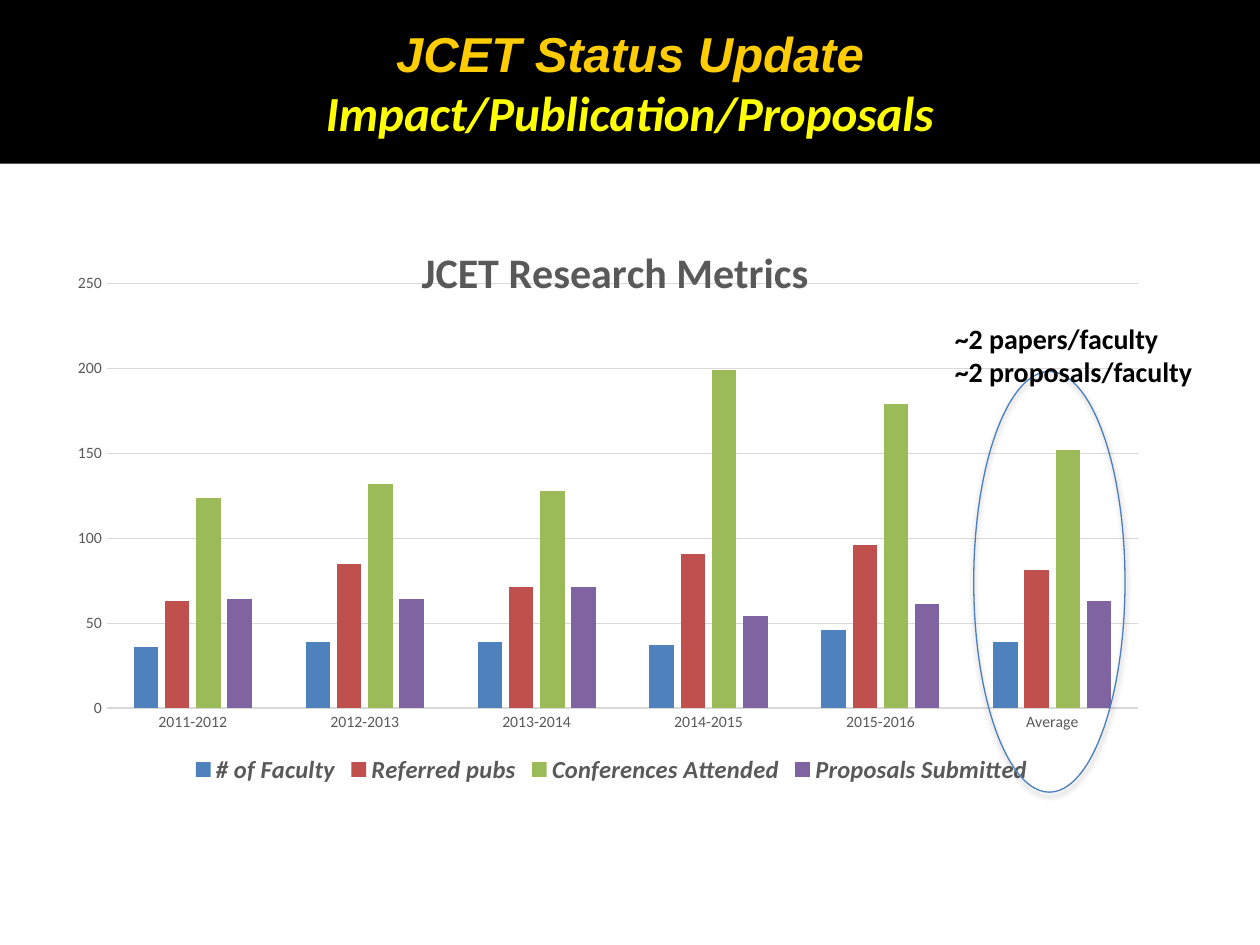
import pptx
import pptx.chart.data
import pptx.dml.color
import pptx.enum.chart
import pptx.enum.shapes
import pptx.enum.text
import pptx.oxml
import pptx.oxml.ns
import pptx.util

Cm = pptx.util.Cm
RGBColor = pptx.dml.color.RGBColor
BLACK = RGBColor(0x00, 0x00, 0x00)
GOLD = RGBColor(0xFF, 0xCC, 0x00)
YELLOW = RGBColor(0xFF, 0xFF, 0x00)
GREY = RGBColor(0x59, 0x59, 0x59)
GRID = RGBColor(0xD9, 0xD9, 0xD9)
RING = RGBColor(0x4B, 0x7E, 0xBC)

YEARS = ["2011-2012", "2012-2013", "2013-2014", "2014-2015", "2015-2016", "Average"]
METRICS = [
    ("# of Faculty", RGBColor(0x4F, 0x81, 0xBD), (36, 39, 39, 37, 46, 39)),
    ("Referred pubs", RGBColor(0xC0, 0x50, 0x4D), (63, 85, 71, 91, 96, 81)),
    ("Conferences Attended", RGBColor(0x9B, 0xBB, 0x59), (124, 132, 128, 199, 179, 152)),
    ("Proposals Submitted", RGBColor(0x80, 0x64, 0xA2), (64, 64, 71, 54, 61, 63)),
]


def apply(target, values):
    for name, value in values.items():
        setattr(target, name, value)


class MetricsSlide:
    def __init__(self, slide):
        self.slide = slide

    def font(self, font, size, color, family="Calibri", bold=True, italic=False):
        apply(font, dict(size=pptx.util.Pt(size), name=family, bold=bold, italic=italic))
        font.color.rgb = color

    def line(self, line, color):
        line.color.rgb = color
        line.width = pptx.util.Pt(0.75)

    def shape(self, kind, box):
        shape = self.slide.shapes.add_shape(kind, *box)
        shape.shadow.inherit = False
        return shape

    def band(self, *box):
        band = self.shape(pptx.enum.shapes.MSO_SHAPE.RECTANGLE, box)
        band.fill.solid()
        band.fill.fore_color.rgb = BLACK
        band.line.fill.background()

    def ring(self, *box):
        ring = self.shape(pptx.enum.shapes.MSO_SHAPE.OVAL, box)
        ring.fill.background()
        self.line(ring.line, RING)
        effects = ring._element.spPr.find(pptx.oxml.ns.qn("a:effectLst"))
        effects.append(pptx.oxml.parse_xml(
            f'<a:outerShdw {pptx.oxml.ns.nsdecls("a")} blurRad="40000" dist="23000" '
            'dir="5400000" rotWithShape="0"><a:srgbClr val="000000">'
            '<a:alpha val="35000"/></a:srgbClr></a:outerShdw>'))

    def fill_text(self, frame, lines, align):
        for index, (text, style) in enumerate(lines):
            paragraph = frame.add_paragraph() if index else frame.paragraphs[0]
            paragraph.alignment = align
            run = paragraph.add_run()
            run.text = text
            self.font(run.font, **style)

    def title(self, lines, *box):
        title = self.slide.shapes.title
        apply(title, dict(zip(("left", "top", "width", "height"), box)))
        apply(title.text_frame, dict(
            word_wrap=True, auto_size=pptx.enum.text.MSO_AUTO_SIZE.NONE,
            vertical_anchor=pptx.enum.text.MSO_ANCHOR.MIDDLE))
        self.fill_text(title.text_frame, lines, pptx.enum.text.PP_ALIGN.CENTER)
        # Bring the title in front of the band
        self.slide.shapes._spTree.append(title._element)

    def note(self, lines, *box):
        frame = self.slide.shapes.add_textbox(*box).text_frame
        frame.word_wrap = True
        self.fill_text(frame, lines, pptx.enum.text.PP_ALIGN.LEFT)

    def layout(self, parent, **values):
        """Place a chart part by fractions of the chart area."""
        for old in parent.findall(pptx.oxml.ns.qn("c:layout")):
            parent.remove(old)
        items = "".join(f'<c:{name} val="{value}"/>' for name, value in values.items())
        return pptx.oxml.parse_xml(
            f'<c:layout {pptx.oxml.ns.nsdecls("c")}><c:manualLayout>{items}'
            '</c:manualLayout></c:layout>')

    def chart(self, heading, *box):
        data = pptx.chart.data.CategoryChartData()
        data.categories = YEARS
        for name, _, values in METRICS:
            data.add_series(name, values)
        chart = self.slide.shapes.add_chart(
            pptx.enum.chart.XL_CHART_TYPE.COLUMN_CLUSTERED, *box, data).chart
        self.font(chart.font, 10, BLACK, bold=False)

        # Heading and legend
        chart.has_title = True
        frame = chart.chart_title.text_frame
        frame.text = heading
        self.font(frame.paragraphs[0].runs[0].font, 24, GREY)
        title = chart.chart_title._element
        title.find(pptx.oxml.ns.qn("c:tx")).addnext(
            self.layout(title, xMode="edge", yMode="edge", x=0.32, y=0.05))
        chart.has_legend = True
        apply(chart.legend, dict(
            position=pptx.enum.chart.XL_LEGEND_POSITION.BOTTOM, include_in_layout=False))
        self.font(chart.legend.font, 14, GREY, italic=True)

        # Plot
        plot = chart.plots[0]
        apply(plot, dict(gap_width=219, overlap=-27, vary_by_categories=False))
        area = chart._chartSpace.chart.plotArea
        area.insert(0, self.layout(
            area, layoutTarget="inner", xMode="edge", yMode="edge",
            x=0.04, y=0.13, w=0.94, h=0.73))
        for series, (_, color, _) in zip(plot.series, METRICS):
            series.format.fill.solid()
            series.format.fill.fore_color.rgb = color

        # Axes
        none = pptx.enum.chart.XL_TICK_MARK.NONE
        for axis in (chart.category_axis, chart.value_axis):
            apply(axis, dict(major_tick_mark=none, minor_tick_mark=none))
            self.font(axis.tick_labels.font, 9, GREY, bold=False)
        self.line(chart.category_axis.format.line, GRID)
        apply(chart.value_axis, dict(
            minimum_scale=0, maximum_scale=250, major_unit=50, has_major_gridlines=True))
        chart.value_axis.format.line.fill.background()
        self.line(chart.value_axis.major_gridlines.format.line, GRID)


def main():
    deck = pptx.Presentation()
    apply(deck, dict(slide_width=Cm(25.4), slide_height=Cm(19.05)))
    page = MetricsSlide(deck.slides.add_slide(deck.slide_layouts[5]))

    # Header band
    page.band(Cm(0), Cm(0), Cm(25.4), Cm(3.3))

    # Metrics with the average ringed
    page.chart("JCET Research Metrics", Cm(1.27), Cm(4.19), Cm(22.12), Cm(11.73))
    page.ring(Cm(19.63), Cm(7.49), Cm(3.05), Cm(8.48))
    page.note([(f"~2 {item}/faculty", dict(size=16, color=BLACK))
               for item in ("papers", "proposals")],
              Cm(19), Cm(6.35), Cm(5.74), Cm(2.31))

    # Title
    page.title([
        ("JCET Status Update", dict(size=28, color=GOLD, family="Arial", italic=True)),
        ("Impact/Publication/Proposals", dict(size=28, color=YELLOW, italic=True)),
    ], Cm(0), Cm(0.03), Cm(25.4), Cm(3.25))

    deck.save("out.pptx")


if __name__ == "__main__":
    main()
